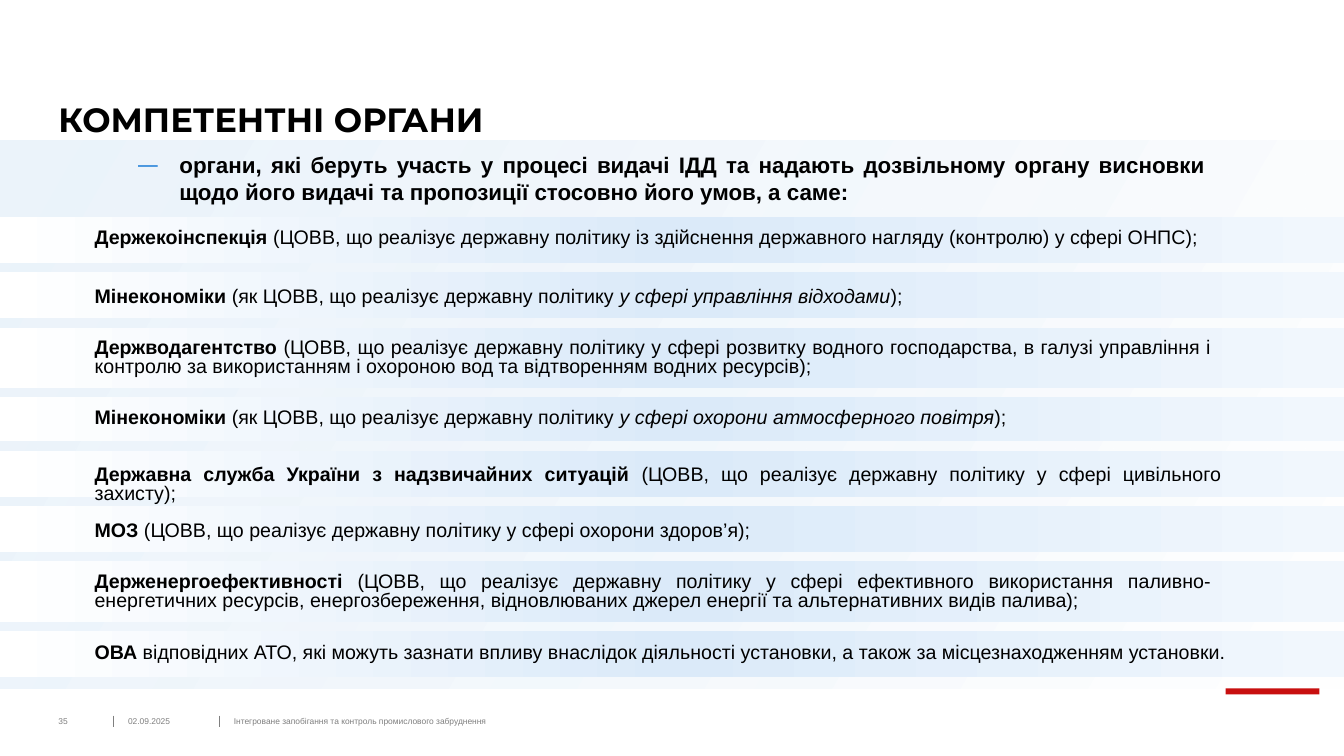
"""Builds the slide that lists the competent authorities."""
import dataclasses

import lxml.etree
import pptx
import pptx.dml.color
import pptx.enum.shapes
import pptx.enum.text
import pptx.oxml.ns
import pptx.util


@dataclasses.dataclass(frozen=True)
class Theme:
    """Holds the colours, fonts and type sizes."""
    ink: str = "000000"
    muted: str = "7F7F7F"
    bullet: str = "006CD2"
    accent: str = "C80F0F"
    panel: tuple = ((0, "E5F0FA", 73), (100, "FFFFFF", 100))
    band: tuple = ((0, "FFFFFF", 100), (50, "DBEAF9", 100), (100, "F1F7FD", 100))
    heading_font: str = "Montserrat"
    body_font: str = "Arial"
    title_size: float = 24
    lead_size: float = 16
    item_size: float = 14
    footer_size: float = 6


@dataclasses.dataclass(frozen=True)
class Authority:
    """Describes one band: its text parts and its measures in grid units."""
    name: str
    duty: str
    topic: str = ""
    ending: str = ""
    height: float = 1.84
    text_offset: float = 0.28
    text_height: float = 1.16
    text_width: float = 33.84


THEME = Theme()
SLIDE_WIDTH, SLIDE_HEIGHT = pptx.util.Inches(13.333), pptx.util.Inches(7.5)
COLUMNS, ROWS = 40, 30
MARGIN, TEXT_LEFT = 1.74, 2.52
BAND_TOP, BAND_GAP = 8.6, 0.36
FOOTER_TOP = 28.4
INSETS = (0.1, 0.05)

TITLE = "КОМПЕТЕНТНІ ОРГАНИ"
LEAD = ("органи, які беруть участь у процесі видачі ІДД та надають дозвільному органу "
        "висновки щодо його видачі та пропозиції стосовно його умов, а саме:")
AUTHORITIES = (
    Authority("Держекоінспекція", " (ЦОВВ, що реалізує державну політику із здійснення "
              "державного нагляду (контролю) у сфері ОНПС);", text_offset=0.32),
    Authority("Мінекономіки", " (як ЦОВВ, що реалізує державну політику ",
              "у сфері управління відходами", ");", text_offset=0.44),
    Authority("Держводагентство", " (ЦОВВ, що реалізує державну політику у сфері розвитку "
              "водного господарства, в галузі управління і контролю за використанням і "
              "охороною вод та відтворенням водних ресурсів);", height=2.4, text_height=1.92),
    Authority("Мінекономіки", " (як ЦОВВ, що реалізує державну політику ",
              "у сфері охорони атмосферного повітря", ");", height=1.76),
    Authority("Державна служба України з надзвичайних ситуацій", " (ЦОВВ, що реалізує "
              "державну політику у сфері цивільного захисту);",
              text_offset=0.44, text_width=34.14),
    Authority("МОЗ", " (ЦОВВ, що реалізує державну політику у сфері охорони здоров’я);",
              text_offset=0.44),
    Authority("Держенергоефективності", " (ЦОВВ, що реалізує державну політику у сфері "
              "ефективного використання паливно-енергетичних ресурсів, енергозбереження, "
              "відновлюваних джерел енергії та альтернативних видів палива);",
              height=2.4, text_height=1.92),
    Authority("ОВА", " відповідних АТО, які можуть зазнати впливу внаслідок діяльності "
              "установки, а також за місцезнаходженням установки.",
              text_offset=0.32, text_width=34.71),
)
FOOTERS = (
    (MARGIN, 1.53, "35"),
    (3.81, 2.37, "02.09.2025"),
    (6.96, 22.44, "Інтегроване запобігання та контроль промислового забруднення"),
)
FOOTER_DIVIDERS = (3.39, 6.54)


def grid(left, top, width, height):
    """Turns grid columns and rows into slide lengths."""
    column, row = SLIDE_WIDTH / COLUMNS, SLIDE_HEIGHT / ROWS
    return round(left * column), round(top * row), round(width * column), round(height * row)


def rgb(value):
    """Makes a colour from its hexadecimal form."""
    return pptx.dml.color.RGBColor.from_string(value)


def add_child(parent, tag, **attributes):
    """Appends a drawing element with the given attributes."""
    return lxml.etree.SubElement(parent, pptx.oxml.ns.qn(tag), attributes)


def format_run(run, size, color=THEME.ink, font=THEME.body_font, bold=False, italic=False):
    """Gives a run its type style."""
    run.font.size = pptx.util.Pt(size)
    run.font.name = font
    run.font.color.rgb = rgb(color)
    run.font.bold = bold
    run.font.italic = italic


def format_frame(frame, insets, anchor):
    """Sets insets, wrapping and anchoring of a text frame."""
    frame.auto_size = pptx.enum.text.MSO_AUTO_SIZE.NONE
    frame.word_wrap = True
    frame.vertical_anchor = anchor
    frame.margin_left = frame.margin_right = pptx.util.Inches(insets[0])
    frame.margin_top = frame.margin_bottom = pptx.util.Inches(insets[1])


def fill_placeholder(placeholder, box, text, insets, anchor, alignment):
    """Moves a placeholder, sets its text and returns its paragraph."""
    placeholder.left, placeholder.top, placeholder.width, placeholder.height = box
    frame = placeholder.text_frame
    frame.text = text
    format_frame(frame, insets, anchor)
    paragraph = frame.paragraphs[0]
    paragraph.alignment = alignment
    paragraph.space_before = pptx.util.Pt(0)
    return paragraph


def add_rectangle(slide, box):
    """Adds a rectangle without outline or shadow."""
    shape = slide.shapes.add_shape(pptx.enum.shapes.MSO_SHAPE.RECTANGLE, *box)
    shape.shadow.inherit = False
    shape.line.fill.background()
    return shape


def add_gradient(slide, box, stops, angle):
    """Adds a rectangle filled with a linear gradient."""
    shape = add_rectangle(slide, box)
    shape.fill.gradient()
    shape.fill.gradient_angle = angle
    stop_list = shape.element.spPr.find(".//" + pptx.oxml.ns.qn("a:gsLst"))
    for stop in list(stop_list):
        stop_list.remove(stop)
    for position, color, opacity in stops:
        stop = add_child(stop_list, "a:gs", pos=str(position * 1000))
        value = add_child(stop, "a:srgbClr", val=color)
        if opacity < 100:
            add_child(value, "a:alpha", val=str(opacity * 1000))
    return shape


def add_title(slide):
    """Fills the title placeholder."""
    anchor, left = pptx.enum.text.MSO_ANCHOR.BOTTOM, pptx.enum.text.PP_ALIGN.LEFT
    box = grid(MARGIN, 1.6, 24.09, 3.96)
    paragraph = fill_placeholder(slide.shapes.title, box, TITLE, (0, 0), anchor, left)
    paragraph.line_spacing = 0.9
    format_run(paragraph.runs[0], THEME.title_size, font=THEME.heading_font, bold=True)


def add_lead(slide):
    """Fills the body placeholder with the dashed lead statement."""
    anchor, justify = pptx.enum.text.MSO_ANCHOR.TOP, pptx.enum.text.PP_ALIGN.JUSTIFY
    box = grid(3.81, 5.8, 32.37, 2.56)
    paragraph = fill_placeholder(slide.placeholders[1], box, LEAD, INSETS, anchor, justify)
    properties = paragraph._p.get_or_add_pPr()
    indent = pptx.util.Inches(0.41)
    properties.set("marL", str(indent))
    properties.set("indent", str(-indent))
    add_child(add_child(properties, "a:buClr"), "a:srgbClr", val=THEME.bullet)
    add_child(properties, "a:buSzPct", val="88000")
    add_child(properties, "a:buFont", typeface=THEME.body_font)
    add_child(properties, "a:buChar", char="—")
    format_run(paragraph.runs[0], THEME.lead_size, bold=True)


def add_authority(slide, authority, top):
    """Adds one gradient band with its authority text."""
    add_gradient(slide, grid(0, top, COLUMNS, authority.height), THEME.band, 0)
    text_box = slide.shapes.add_textbox(*grid(
        TEXT_LEFT, top + authority.text_offset, authority.text_width, authority.text_height))
    format_frame(text_box.text_frame, INSETS, pptx.enum.text.MSO_ANCHOR.TOP)
    paragraph = text_box.text_frame.paragraphs[0]
    paragraph.alignment = pptx.enum.text.PP_ALIGN.JUSTIFY
    paragraph.line_spacing = 0.8
    parts = ((authority.name, True, False), (authority.duty, False, False),
             (authority.topic, False, True), (authority.ending, False, False))
    for text, bold, italic in parts:
        if text:
            run = paragraph.add_run()
            run.text = text
            format_run(run, THEME.item_size, bold=bold, italic=italic)


def add_footer(slide):
    """Adds the footer texts, their dividers and the accent bar."""
    for left, width, text in FOOTERS:
        text_box = slide.shapes.add_textbox(*grid(left, FOOTER_TOP, width, 0.4))
        text_box.text_frame.text = text
        format_frame(text_box.text_frame, (0, 0), pptx.enum.text.MSO_ANCHOR.MIDDLE)
        format_run(text_box.text_frame.paragraphs[0].runs[0], THEME.footer_size, THEME.muted)
    for position in FOOTER_DIVIDERS:
        left, top, _, height = grid(position, FOOTER_TOP, 0, 0.44)
        divider = slide.shapes.add_connector(
            pptx.enum.shapes.MSO_CONNECTOR.STRAIGHT, left, top, left, top + height)
        divider.line.color.rgb = rgb(THEME.muted)
        divider.line.width = pptx.util.Pt(0.75)
        add_child(divider.element.spPr, "a:effectLst")
    accent_bar = add_rectangle(slide, grid(36.48, 27.32, 2.79, 0.24))
    accent_bar.fill.solid()
    accent_bar.fill.fore_color.rgb = rgb(THEME.accent)


def main():
    """Builds and saves the presentation."""
    presentation = pptx.Presentation()
    presentation.slide_width, presentation.slide_height = SLIDE_WIDTH, SLIDE_HEIGHT
    slide = presentation.slides.add_slide(presentation.slide_layouts[1])
    panel = add_gradient(slide, grid(0, 5.56, COLUMNS, 21.76), THEME.panel, 330)
    slide.shapes.title.element.addprevious(panel.element)
    add_title(slide)
    add_lead(slide)
    top = BAND_TOP
    for authority in AUTHORITIES:
        add_authority(slide, authority, top)
        top += authority.height + BAND_GAP
    add_footer(slide)
    presentation.save("out.pptx")


if __name__ == "__main__":
    main()
